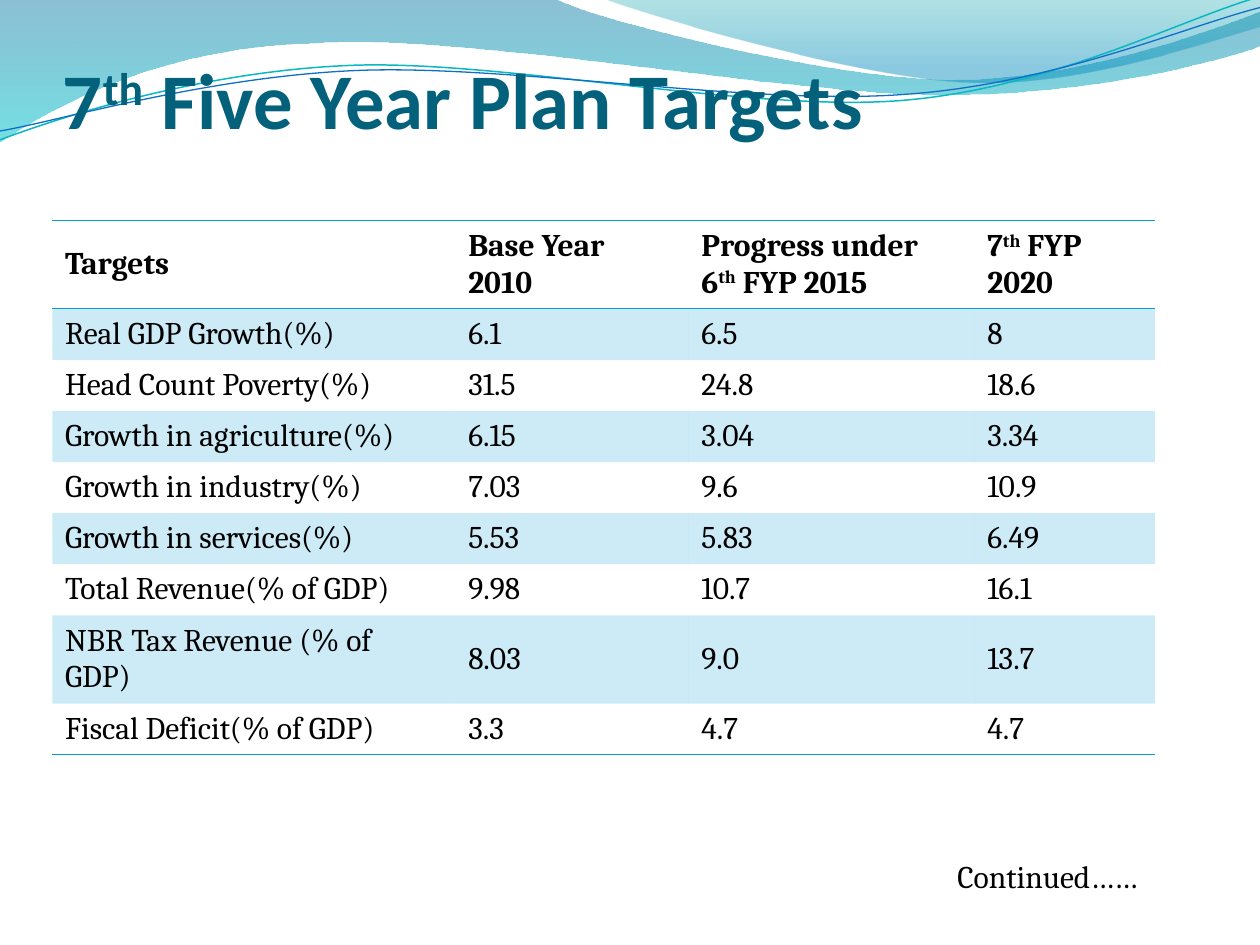
from lxml.etree import SubElement
from pptx import Presentation
from pptx.dml.color import RGBColor
from pptx.enum.text import MSO_ANCHOR
from pptx.oxml.ns import qn
from pptx.util import Inches, Pt

TITLE_COLOR = RGBColor(0x04, 0x61, 0x7B)
BLACK = RGBColor(0, 0, 0)
TABLE_BLUE = RGBColor(0x00, 0x9D, 0xD9)
TEAL_LINE = RGBColor(0x0A, 0xB8, 0xBF)
BLUE_LINE = RGBColor(0x0F, 0x6F, 0xC6)
NO_STYLE = "{2D5ABB26-0587-4C30-8999-92F81FD0307C}"

# Text between carets is superscript; a line break starts a new paragraph.
TITLE = "7^th^ Five Year Plan Targets"
FOOTNOTE = "Continued……"
ROWS = [
    ("Targets", "Base Year\n2010", "Progress under\n6^th^ FYP 2015", "7^th^ FYP\n2020"),
    ("Real GDP Growth(%)", "6.1", "6.5", "8"),
    ("Head Count Poverty(%)", "31.5", "24.8", "18.6"),
    ("Growth in agriculture(%)", "6.15", "3.04", "3.34"),
    ("Growth in industry(%)", "7.03", "9.6", "10.9"),
    ("Growth in services(%)", "5.53", "5.83", "6.49"),
    ("Total Revenue(% of GDP)", "9.98", "10.7", "16.1"),
    ("NBR Tax Revenue (% of GDP)", "8.03", "9.0", "13.7"),
    ("Fiscal Deficit(% of GDP)", "3.3", "4.7", "4.7"),
]
COLUMN_WIDTHS = [3.2, 1.85, 2.27, 1.43]
HEADER_HEIGHT, ROW_HEIGHT = Inches(0.7), Pt(29.2)

# Outlines: a pair is a straight step, six numbers are a Bezier step.
# Gradient stops: position, colour, opacity in percent.
BANDS = [
    ([(0, 0), (4.4, -0.01), (4.76, 0.17, 6.64, 0.63, 7.58, 0.63),
      (8.53, 0.63, 9.58, 0.26, 10, 0.09), (10.01, 0.36),
      (9.83, 0.44, 8.7, 0.76, 7.46, 0.75), (6.22, 0.75, 3.82, 0.28, 2.57, 0.34),
      (1.29, 0.36, 0.46, 0.83, -0.01, 1.13), (0, 0)],
     [(0, RGBColor(0x00, 0x74, 0xA1), 45), (1, RGBColor(0x00, 0xC6, 0xCF), 55)]),
    ([(4.79, -0.01), (5.09, 0.11, 6.82, 0.62, 7.69, 0.65),
      (8.56, 0.69, 9.61, 0.32, 10, 0.21), (10, 0), (4.79, -0.01)],
     [(0, RGBColor(0x00, 0xA1, 0xA9), 30), (0.8, RGBColor(0x00, 0x8B, 0xBF), 45)]),
]
WAVES = [
    ([(0, 1.11), (0.48, 0.93, 1.58, 0.57, 2.77, 0.52),
      (3.95, 0.47, 5.93, 0.89, 7.13, 0.8), (8.33, 0.71, 9.38, 0.15, 9.98, -0.02)],
     TEAL_LINE, 0.85),
    ([(0, 1.04), (0.47, 0.96, 1.64, 0.61, 2.83, 0.56),
      (4.03, 0.51, 5.97, 0.84, 7.17, 0.75), (8.36, 0.67, 9.41, 0.21, 10, 0.06)],
     BLUE_LINE, 0.75),
]


def add_outline(slide, outline, close):
    """Build the outline through its end points, then bend the Bezier steps."""
    ends = [(Inches(step[-2]), Inches(step[-1])) for step in outline]
    builder = slide.shapes.build_freeform(*ends[0])
    builder.add_line_segments(ends[1:], close=close)
    shape = builder.convert_to_shape()
    shape.shadow.inherit = False
    segments = list(shape.element.iter(qn("a:lnTo")))
    for segment, step in zip(segments, outline[1:]):
        if len(step) == 6:
            segment.tag = qn("a:cubicBezTo")
            for index, (x, y) in enumerate((step[:2], step[2:4])):
                point = SubElement(segment, qn("a:pt"), x=str(Inches(x) - shape.left),
                                   y=str(Inches(y) - shape.top))
                segment.insert(index, point)
    return shape


def set_opacity(color_element, percent):
    SubElement(color_element, qn("a:alpha")).set("val", str(percent * 1000))


def add_band(slide, outline, stops):
    shape = add_outline(slide, outline, True)
    shape.line.fill.background()
    shape.fill.gradient()
    shape.fill.gradient_angle = 270
    for gradient_stop, (position, color, _) in zip(shape.fill.gradient_stops, stops):
        gradient_stop.position = position
        gradient_stop.color.rgb = color
    gradient = shape.element.spPr.find(qn("a:gradFill"))
    for color_element, (_, _, opacity) in zip(gradient.iter(qn("a:srgbClr")), stops):
        set_opacity(color_element, opacity)


def add_wave(slide, outline, color, width):
    shape = add_outline(slide, outline, False)
    shape.fill.background()
    shape.line.color.rgb = color
    shape.line.width = Pt(width)


def write(text_frame, text, font_name, size, color, bold=False):
    for index, line in enumerate(text.split("\n")):
        paragraph = text_frame.add_paragraph() if index else text_frame.paragraphs[0]
        font = paragraph.font
        font.name, font.size, font.bold = font_name, Pt(size), bold
        font.color.rgb = color
        for part_index, part in enumerate(line.split("^")):
            run = paragraph.add_run()
            run.text = part
            if part_index % 2:
                run._r.get_or_add_rPr().set("baseline", "30000")


def add_border(cell, side):
    border = SubElement(cell._tc.get_or_add_tcPr(), qn("a:ln" + side), w=str(Pt(1)))
    fill = SubElement(border, qn("a:solidFill"))
    SubElement(fill, qn("a:srgbClr"), val=str(TABLE_BLUE))


def add_targets_table(slide):
    height = HEADER_HEIGHT + ROW_HEIGHT * (len(ROWS) - 1)
    frame = slide.shapes.add_table(len(ROWS), len(COLUMN_WIDTHS), Pt(30), Inches(1.75),
                                   Inches(sum(COLUMN_WIDTHS)), height)
    table = frame.table
    table.horz_banding = False
    table._tbl.tblPr.find(qn("a:tableStyleId")).text = NO_STYLE
    for column, width in zip(table.columns, COLUMN_WIDTHS):
        column.width = Inches(width)
    for row_index, values in enumerate(ROWS):
        is_header = row_index == 0
        table.rows[row_index].height = HEADER_HEIGHT if is_header else ROW_HEIGHT
        for cell, value in zip(table.rows[row_index].cells, values):
            cell.vertical_anchor = MSO_ANCHOR.MIDDLE
            write(cell.text_frame, value, "Cambria", 18, BLACK, is_header)
            if is_header:
                add_border(cell, "T")
            if is_header or row_index == len(ROWS) - 1:
                add_border(cell, "B")
            if row_index % 2:
                cell.fill.solid()
                cell.fill.fore_color.rgb = TABLE_BLUE
                set_opacity(cell._tc.tcPr.find(qn("a:solidFill"))[0], 20)
            else:
                cell.fill.background()


def main():
    presentation = Presentation()
    presentation.slide_width, presentation.slide_height = Inches(10), Inches(7.5)
    slide = presentation.slides.add_slide(presentation.slide_layouts[6])

    for outline, stops in BANDS:
        add_band(slide, outline, stops)
    for outline, color, width in WAVES:
        add_wave(slide, outline, color, width)

    title = slide.shapes.add_textbox(Inches(0.5), Inches(0.42), Inches(9), Inches(0.73)).text_frame
    title.word_wrap = True
    title.vertical_anchor = MSO_ANCHOR.BOTTOM
    title.margin_left = title.margin_right = title.margin_bottom = 0
    write(title, TITLE, "Calibri", 45, TITLE_COLOR, True)

    add_targets_table(slide)

    footnote = slide.shapes.add_textbox(Inches(7.5), Inches(6.75), Inches(1.74), Inches(0.4))
    write(footnote.text_frame, FOOTNOTE, "Cambria", 18, BLACK)
    presentation.save("out.pptx")


if __name__ == "__main__":
    main()
